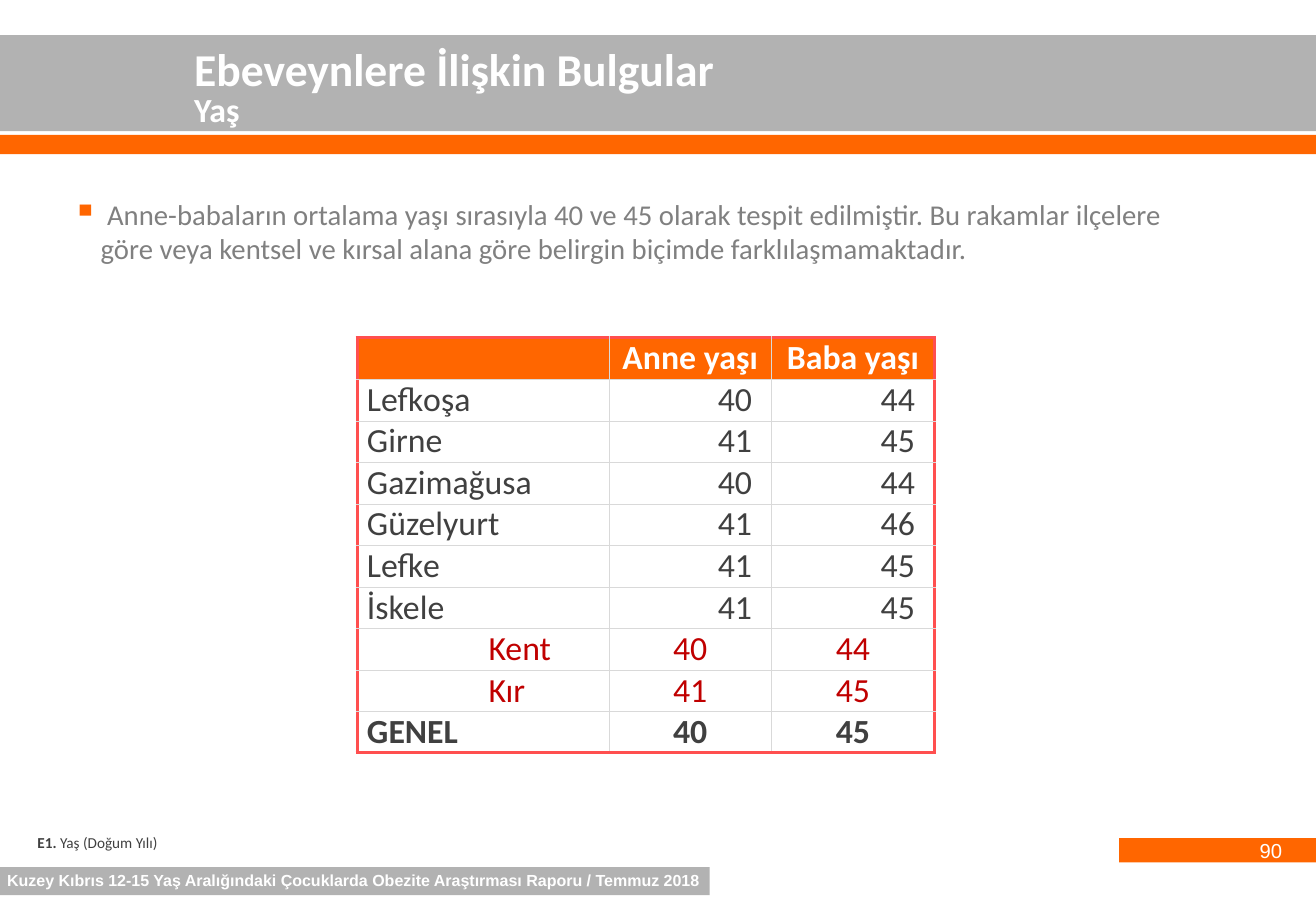
from lxml import etree
from pptx import Presentation
from pptx.dml.color import RGBColor
from pptx.enum.shapes import MSO_SHAPE
from pptx.enum.text import MSO_ANCHOR, MSO_AUTO_SIZE, PP_ALIGN
from pptx.oxml.ns import qn
from pptx.util import Inches, Pt

RECT = MSO_SHAPE.RECTANGLE
MIDDLE = MSO_ANCHOR.MIDDLE
FIT = MSO_AUTO_SIZE.SHAPE_TO_FIT_TEXT
LEFT, CENTER, RIGHT = PP_ALIGN.LEFT, PP_ALIGN.CENTER, PP_ALIGN.RIGHT

WIDE, HIGH = 10.83, 7.5
ORANGE, GREY, WHITE = "FF6600", "B2B2B2", "FFFFFF"
DARK, MID, RED = "404040", "808080", "C00000"
FRAME, GRID = ("FF4F4F", 2.25), ("D9D9D9", 0.25)

HEADS = ["", "Anne yaşı", "Baba yaşı"]
TOWNS = [
    ("Lefkoşa", 40, 44),
    ("Girne", 41, 45),
    ("Gazimağusa", 40, 44),
    ("Güzelyurt", 41, 46),
    ("Lefke", 41, 45),
    ("İskele", 41, 45),
]
AREAS = [("Kent", 40, 44), ("Kır", 41, 45)]
TOTAL = ("GENEL", 40, 45)


def color(code):
    return RGBColor.from_string(code)


def style(run, size, code, bold=False, face="Calibri"):
    run.font.size = Pt(size)
    run.font.name = face
    run.font.bold = bold
    run.font.color.rgb = color(code)


def add_bar(slide, left, top, width, height, code):
    bar = slide.shapes.add_shape(
        RECT, Inches(left), Inches(top), Inches(width), Inches(height))
    bar.shadow.inherit = False
    bar.fill.solid()
    bar.fill.fore_color.rgb = color(code)
    bar.line.fill.background()


def add_text(slide, left, top, width, height, text, wrap=True):
    box = slide.shapes.add_textbox(
        Inches(left), Inches(top), Inches(width), Inches(height))
    frame = box.text_frame
    frame.word_wrap = wrap
    if not wrap:
        frame.auto_size = FIT
    frame.text = text
    return frame.paragraphs


def add_header(slide, left, top, width):
    add_bar(slide, left, top, width, 0.79, GREY)
    add_bar(slide, left, top + 0.82, width, 0.16, ORANGE)
    lines = add_text(slide, left + 1.5, top + 0.17, 4.52, 0.66,
                     "Ebeveynlere İlişkin Bulgular\nYaş", wrap=False)
    for line, size in zip(lines, (27, 20)):
        line.line_spacing = Pt(20)
        style(line.runs[0], size, WHITE, bold=True)


def add_body(slide, left, top, width, height):
    line = add_text(
        slide, left, top, width, height,
        " Anne-babaların ortalama yaşı sırasıyla 40 ve 45 olarak tespit "
        "edilmiştir. Bu rakamlar ilçelere göre veya kentsel ve kırsal alana "
        "göre belirgin biçimde farklılaşmamaktadır.")[0]
    props = line._p.get_or_add_pPr()
    props.set("marL", str(Inches(0.23)))
    props.set("indent", str(-Inches(0.23)))
    tint = etree.SubElement(props, qn("a:buClr"))
    etree.SubElement(tint, qn("a:srgbClr"), val=ORANGE)
    etree.SubElement(props, qn("a:buSzPct"), val="120000")
    etree.SubElement(props, qn("a:buChar"), char="▪")
    style(line.runs[0], 17, MID)


def set_edges(cell, edges):
    """Draw the borders; edges maps L, R, T and B to colour and width."""
    props = cell._tc.get_or_add_tcPr()
    for side, (code, width) in edges.items():
        line = etree.SubElement(props, qn("a:ln" + side), w=str(Pt(width)))
        fill = etree.SubElement(line, qn("a:solidFill"))
        etree.SubElement(fill, qn("a:srgbClr"), val=code)


def fill_cell(cell, text, align, inset, back, code, bold):
    cell.fill.solid()
    cell.fill.fore_color.rgb = color(back)
    cell.vertical_anchor = MIDDLE
    cell.margin_left, cell.margin_right = map(Inches, inset)
    cell.margin_top = cell.margin_bottom = 0
    cell.text_frame.text = str(text)
    line = cell.text_frame.paragraphs[0]
    line.alignment = align
    for run in line.runs:
        style(run, 20, code, bold)


def add_ages(slide, left, top, width, height):
    thin, wide = (0.01, 0.01), (0.08, 0.08)
    # values, background, text colour, bold, label inset, number align, inset
    rows = [(HEADS, ORANGE, WHITE, True, wide, CENTER, thin)]
    rows += [(town, WHITE, DARK, False, wide, RIGHT, (0.01, 0.16))
             for town in TOWNS]
    rows += [(area, WHITE, RED, False, (1.08, 0.08), CENTER, thin)
             for area in AREAS]
    rows.append((TOTAL, WHITE, DARK, True, wide, CENTER, thin))

    table = slide.shapes.add_table(
        len(rows), len(HEADS), Inches(left), Inches(top),
        Inches(width), Inches(height)).table
    for col, share in zip(table.columns, (2.07, 1.34, 1.34)):
        col.width = Inches(width * share / 4.75)
    last, end = len(rows) - 1, len(HEADS) - 1
    for r, (values, back, code, bold, label, align, inset) in enumerate(rows):
        table.rows[r].height = Inches(height / len(rows))
        for c, value in enumerate(values):
            cell = table.cell(r, c)
            set_edges(cell, {
                "L": FRAME if c == 0 else GRID,
                "R": FRAME if c == end else GRID,
                "T": FRAME if r == 0 else GRID,
                "B": FRAME if r == last else GRID,
            })
            fill_cell(cell, value, align if c else LEFT,
                      inset if c else label, back, code, bold)


def add_footer(slide, left, top, width):
    note = add_text(slide, left + 0.21, top, 1.21, 0.25, "E1. ", wrap=False)[0]
    note.add_run().text = "Yaş (Doğum Yılı)"
    for run, bold in zip(note.runs, (True, False)):
        style(run, 9, DARK, bold)

    add_bar(slide, left, top + 0.33, 5.84, 0.23, GREY)
    name = add_text(
        slide, left - 0.04, top + 0.31, 5.98, 0.26,
        "Kuzey Kıbrıs 12-15 Yaş Aralığındaki Çocuklarda Obezite "
        "Araştırması Raporu / Temmuz 2018", wrap=False)[0]
    style(name.runs[0], 9.5, WHITE, bold=True, face="Arial")

    right = left + width
    add_bar(slide, right - 1.62, top + 0.09, 1.62, 0.2, ORANGE)
    page = add_text(slide, right - 2.71, top + 0.04, 2.53, 0.52, "90")[0]
    page.alignment = RIGHT
    style(page.runs[0], 12, WHITE, face="Arial")


def main():
    deck = Presentation()
    deck.slide_width, deck.slide_height = Inches(WIDE), Inches(HIGH)
    slide = deck.slides.add_slide(deck.slide_layouts[6])
    add_header(slide, 0, 0.29, WIDE)
    add_body(slide, 0.5, 1.57, 9.61, 0.76)
    add_ages(slide, 2.94, 2.78, 4.75, 3.42)
    add_footer(slide, 0, 6.81, WIDE)
    deck.save("out.pptx")


if __name__ == "__main__":
    main()
